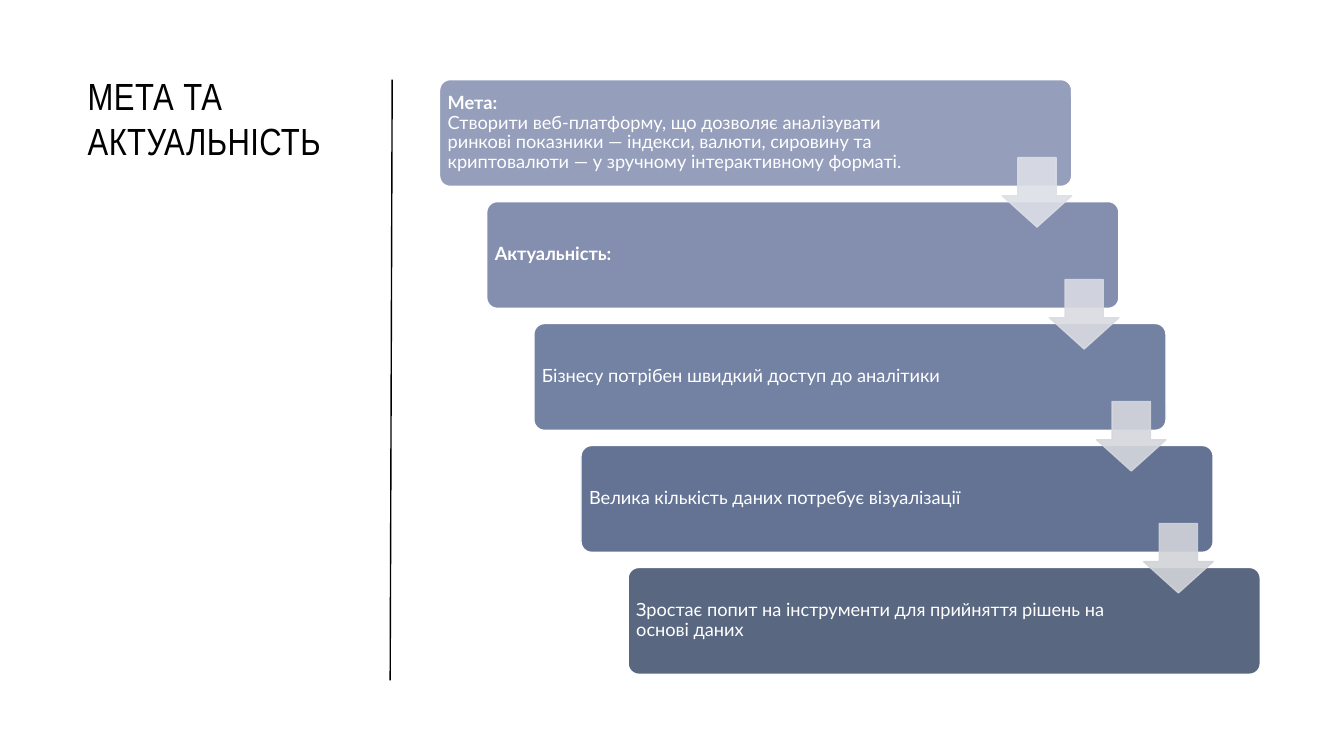
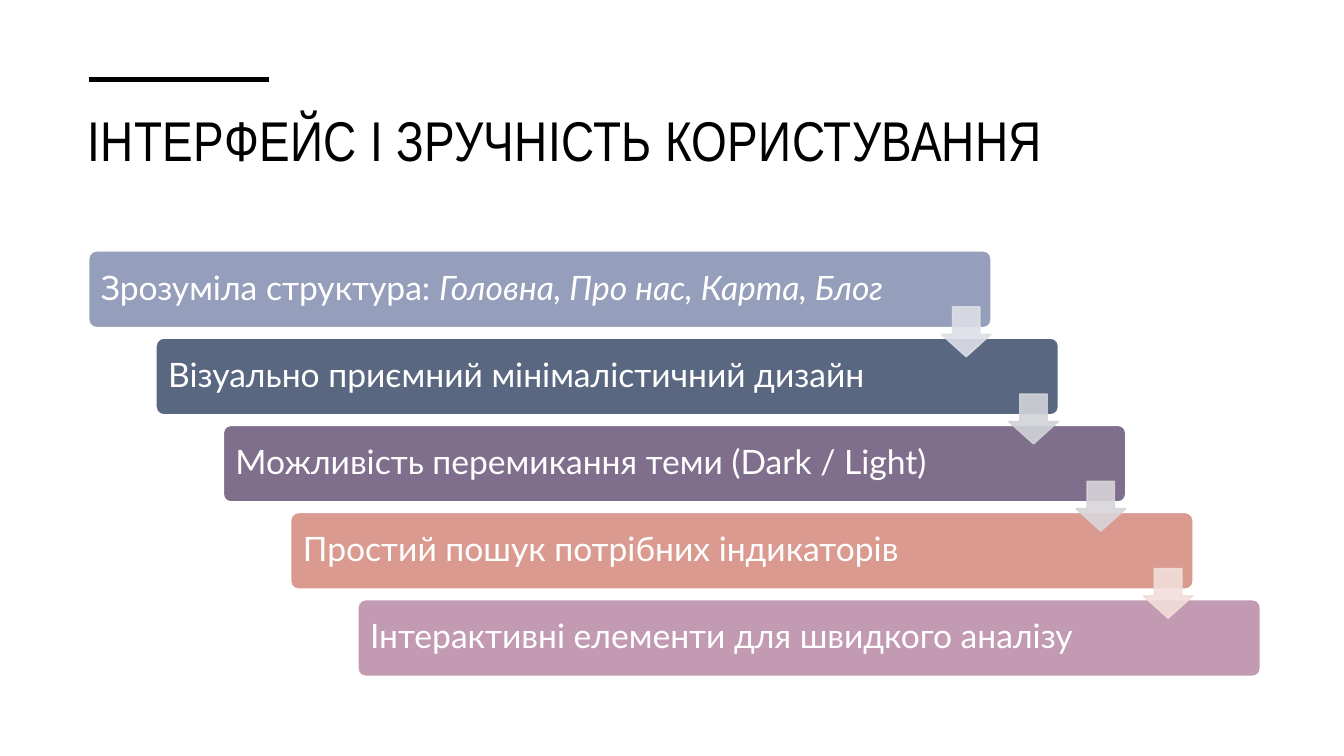
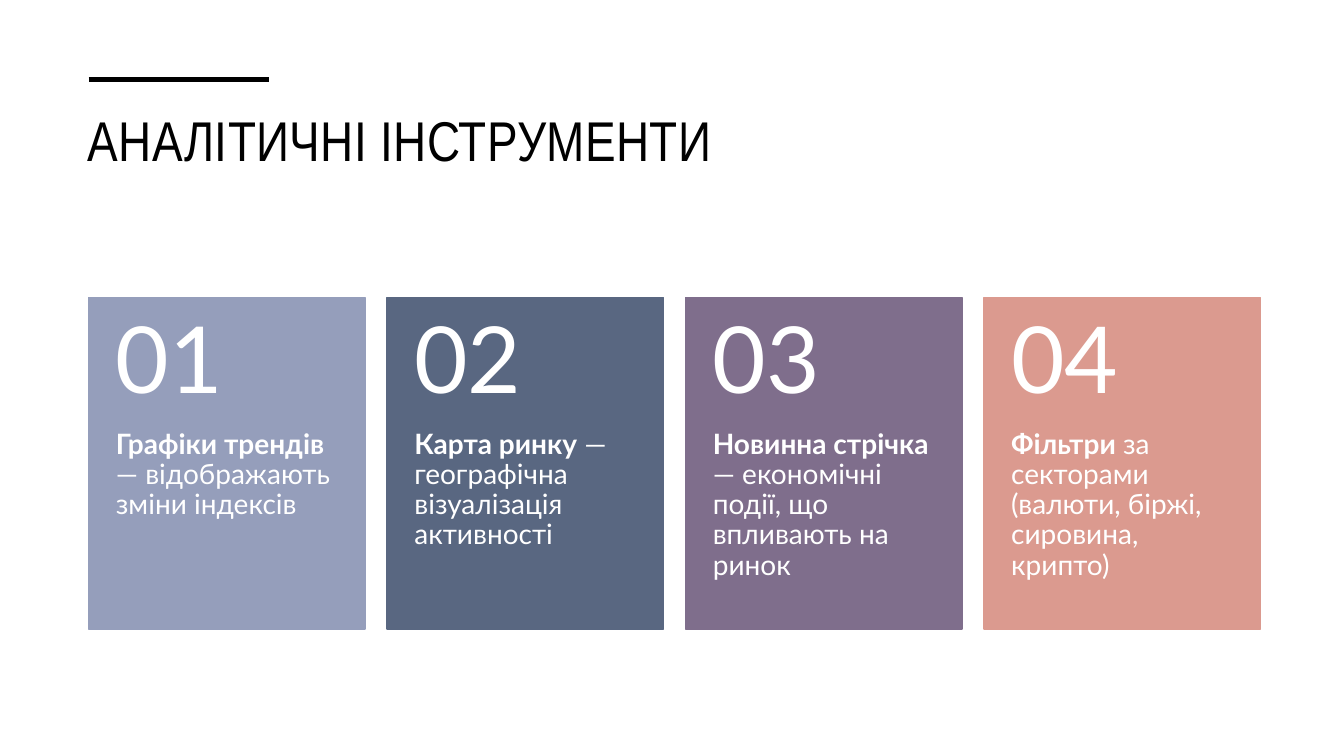
from lxml.etree import SubElement
from pptx import Presentation
from pptx.dml.color import RGBColor
from pptx.enum.shapes import MSO_CONNECTOR, MSO_SHAPE
from pptx.enum.text import MSO_ANCHOR, MSO_AUTO_SIZE, PP_ALIGN
from pptx.oxml.ns import qn
from pptx.util import Inches, Pt

TITLE_FONT, BODY_FONT = "Arial Narrow", "Lato"
BLACK, WHITE = "000000", "FFFFFF"
PERIWINKLE, SLATE, PLUM, CORAL, MAUVE = "959EBB", "596781", "7F6E8C", "DB9A8F", "C29AB1"
LEFT, WIDTH = 0.88, 11.62


def rgb(value):
    return RGBColor.from_string(value)


def add_text(tf, runs, size, insets, anchor):
    tf.word_wrap = True
    tf.auto_size = MSO_AUTO_SIZE.NONE
    tf.vertical_anchor = anchor
    tf.margin_left, tf.margin_top, tf.margin_right, tf.margin_bottom = map(Inches, insets)
    p = tf.paragraphs[0]
    p.alignment = PP_ALIGN.LEFT
    p.line_spacing = 0.9
    for text, style in runs:
        if text == "\n":
            p.add_line_break()
            continue
        r = p.add_run()
        r.text = text
        r.font.name = BODY_FONT
        r.font.size = Pt(size)
        r.font.color.rgb = rgb(WHITE)
        r.font.bold = style == "bold"
        r.font.italic = style == "italic"


def add_box(slide, kind, box, fill, line, alpha=None):
    sp = slide.shapes.add_shape(kind, *map(Inches, box))
    sp.shadow.inherit = False
    sp.fill.solid()
    sp.fill.fore_color.rgb = rgb(fill)
    sp.line.color.rgb = rgb(line)
    sp.line.width = Pt(1)
    if alpha:
        for color in sp._element.spPr.iter(qn("a:srgbClr")):
            SubElement(color, qn("a:alpha"), val=str(alpha * 1000))
    return sp


def add_rule(slide, start, end, width):
    line = slide.shapes.add_connector(MSO_CONNECTOR.STRAIGHT, *map(Inches, start + end))
    line.line.color.rgb = rgb(BLACK)
    line.line.width = Pt(width)
    SubElement(line._element.spPr, qn("a:effectLst"))


def add_title(slide, text, box, size):
    title = slide.shapes.title
    title.left, title.top, title.width, title.height = map(Inches, box)
    tf = title.text_frame
    tf.word_wrap = True
    tf.auto_size = MSO_AUTO_SIZE.NONE
    tf.vertical_anchor = MSO_ANCHOR.TOP
    p = tf.paragraphs[0]
    p.alignment = PP_ALIGN.LEFT
    r = p.add_run()
    r.text = text
    r.font.name = TITLE_FONT
    r.font.size = Pt(size)
    r.font.color.rgb = rgb(BLACK)
    r._r.get_or_add_rPr().set("spc", "30")


def add_top_heading(slide, text):
    add_title(slide, text, (0.77, 1, 11.81, 1.15), 40)
    add_rule(slide, (LEFT, 0.79), (2.67, 0.79), 3.5)


def add_staircase(slide, box, step_size, steps, arrow_colors, size, inset, right_inset):
    left, top, width, height = box
    step_w, step_h = step_size
    dx = (width - step_w) / (len(steps) - 1)
    dy = (height - step_h) / (len(steps) - 1)
    for i, (fill, runs) in enumerate(steps):
        sp = add_box(slide, MSO_SHAPE.ROUNDED_RECTANGLE,
                     (left + i * dx, top + i * dy, step_w, step_h), fill, WHITE)
        sp.adjustments[0] = 0.1
        add_text(sp.text_frame, runs, size, (inset, inset, right_inset, inset), MSO_ANCHOR.MIDDLE)
    side = 0.65 * step_h
    for i, color in enumerate(arrow_colors):
        arrow = add_box(slide, MSO_SHAPE.DOWN_ARROW,
                        (left + i * dx + step_w - side, top + i * dy + 0.73 * step_h, side, side),
                        color, color, 90)
        arrow.adjustments[0] = 0.45
        arrow.adjustments[1] = 0.45
        arrow.adjustments[0] = 0.55


def add_card(slide, box, number, fill, runs):
    left, top, width, height = box
    add_box(slide, MSO_SHAPE.RECTANGLE, box, fill, fill)
    head_h = 0.4 * height
    body = slide.shapes.add_textbox(*map(Inches, (left, top + head_h, width, height - head_h)))
    add_text(body.text_frame, runs, 20, (0.27, 0, 0.27, 0.36), MSO_ANCHOR.TOP)
    head = slide.shapes.add_textbox(*map(Inches, (left, top, width, head_h)))
    add_text(head.text_frame, [(f"{number:02d}", None)], 66, (0.27, 0.18, 0.27, 0.18), MSO_ANCHOR.MIDDLE)


def add_card_row(slide, box, gap, cards):
    left, top, width, height = box
    card_w = (width - gap * (len(cards) - 1)) / len(cards)
    for i, (fill, runs) in enumerate(cards):
        add_card(slide, (left + i * (card_w + gap), top, card_w, height), i + 1, fill, runs)


def build_goal(slide):
    add_title(slide, "МЕТА ТА АКТУАЛЬНІСТЬ", (0.77, 0.67, 2.76, 4.91), 27)
    add_rule(slide, (3.87, 6.75), (3.89, 0.79), 1)
    steps = [
        (PERIWINKLE, [("Мета:", "bold"), ("\n", None),
                      ("Створити веб-платформу, що дозволяє аналізувати ринкові показники — індекси, "
                       "валюти, сировину та криптовалюти — у зручному інтерактивному форматі.", None)]),
        ("848FAF", [("Актуальність:", "bold")]),
        ("7381A2", [("Бізнесу потрібен швидкий доступ до аналітики", None)]),
        ("647394", [("Велика кількість даних потребує візуалізації", None)]),
        (SLATE, [("Зростає попит на інструменти для прийняття рішень на основі даних", None)]),
    ]
    add_staircase(slide, (4.36, 0.79, 8.14, 5.9), (6.27, 1.06), steps,
                  ["DDDFE7", "D9DBE2", "D5D7DD", "D1D3D8"], 13, 0.05, 1.27)


def build_interface(slide):
    add_top_heading(slide, "ІНТЕРФЕЙС І ЗРУЧНІСТЬ КОРИСТУВАННЯ")
    steps = [
        (PERIWINKLE, [("Зрозуміла структура: ", None), ("Головна, Про нас, Карта, Блог", "italic")]),
        (SLATE, [("Візуально приємний мінімалістичний дизайн", None)]),
        (PLUM, [("Можливість перемикання теми (Dark / Light)", None)]),
        (CORAL, [("Простий пошук потрібних індикаторів", None)]),
        (MAUVE, [("Інтерактивні елементи для швидкого аналізу", None)]),
    ]
    add_staircase(slide, (LEFT, 2.49, WIDTH, 4.22), (8.95, 0.76), steps,
                  ["DDDFE7", "D1D3D8", "D8D5DA", "F1DEDB"], 24, 0.1, 0.97)


def build_tools(slide):
    add_top_heading(slide, "АНАЛІТИЧНІ ІНСТРУМЕНТИ")
    cards = [
        (PERIWINKLE, [("Графіки трендів", "bold"), (" — відображають зміни індексів", None)]),
        (SLATE, [("Карта ринку", "bold"), (" — географічна візуалізація активності", None)]),
        (PLUM, [("Новинна стрічка", "bold"), (" — економічні події, що впливають на ринок", None)]),
        (CORAL, [("Фільтри", "bold"), (" за секторами (валюти, біржі, сировина, крипто)", None)]),
    ]
    add_card_row(slide, (LEFT, 2.95, WIDTH, 3.29), 0.22, cards)


def main():
    prs = Presentation()
    prs.slide_width, prs.slide_height = Inches(13.33), Inches(7.5)
    for build in (build_goal, build_interface, build_tools):
        build(prs.slides.add_slide(prs.slide_layouts[5]))
    prs.save("out.pptx")


if __name__ == "__main__":
    main()
